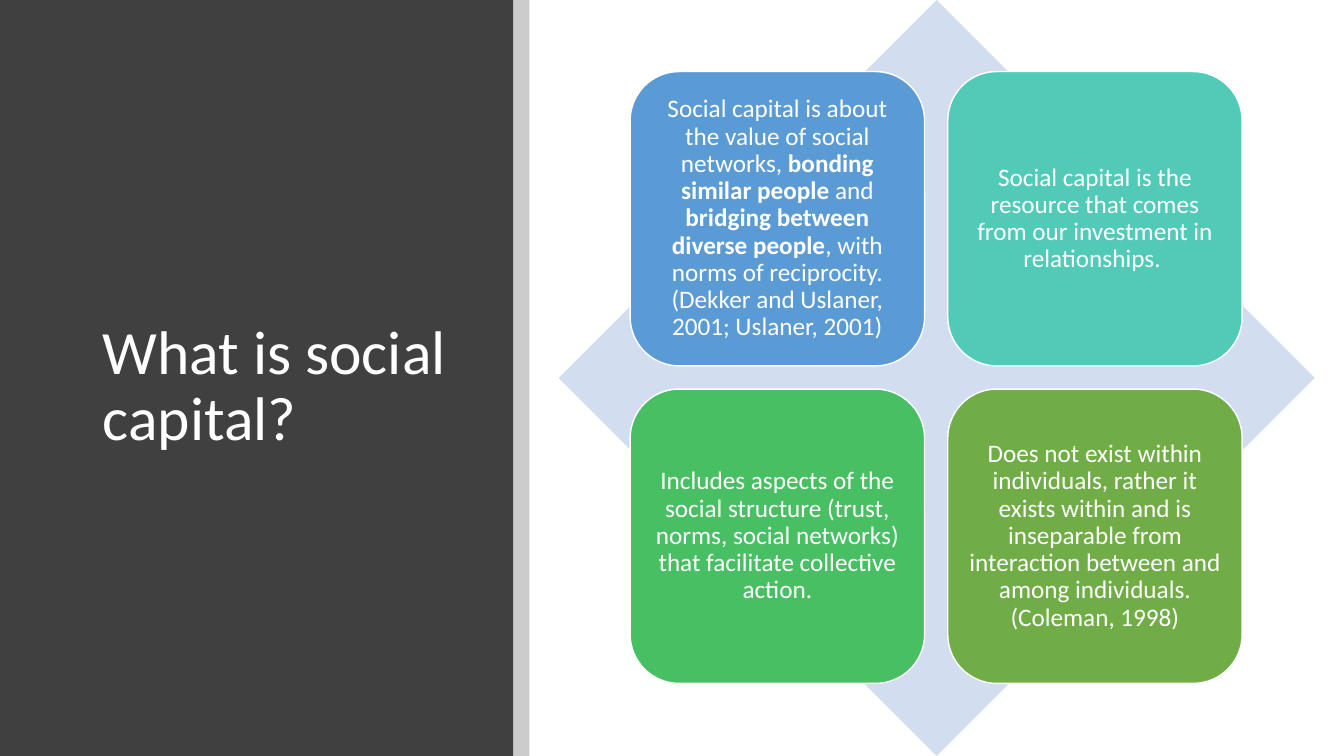
from dataclasses import dataclass
from lxml.etree import SubElement
from pptx import Presentation
from pptx.dml.color import RGBColor as Color
from pptx.enum.shapes import MSO_SHAPE as Kind
from pptx.enum.text import MSO_ANCHOR as Anchor, PP_ALIGN as Align
from pptx.oxml.ns import qn
from pptx.util import Inches, Pt


@dataclass(frozen=True)
class Theme:
    panel: str = "404040"
    strip: str = "000000"
    diamond: str = "D2DEEF"
    white: str = "FFFFFF"
    cards: tuple = ("5B9BD5", "52CAB8", "49BF64", "70AD47")
    font: str = "Calibri"
    title: int = 44
    body: int = 18


theme = Theme()
deck = Presentation()
deck.slide_width, deck.slide_height = Inches(13.33), Inches(7.5)
slide = deck.slides.add_slide(deck.slide_layouts[6])


def draw(kind, left, top, width, height, fill):
    shape = slide.shapes.add_shape(
        kind, Inches(left), Inches(top), Inches(width), Inches(height))
    shape.shadow.inherit = False
    shape.fill.solid()
    shape.fill.fore_color.rgb = Color.from_string(fill)
    shape.line.fill.background()
    return shape


def style(frame, size):
    frame.word_wrap = True
    frame.vertical_anchor = Anchor.MIDDLE
    for para in frame.paragraphs:
        para.line_spacing = 0.9
        for run in para.runs:
            run.font.name = theme.font
            run.font.size = Pt(size)
            run.font.color.rgb = Color.from_string(theme.white)


draw(Kind.RECTANGLE, 0, 0, 5.09, 7.5, theme.panel)

title = slide.shapes.add_textbox(
    Inches(0.92), Inches(0.89), Inches(3.65), Inches(5.91))
title.text_frame.text = "What is social capital?"
style(title.text_frame, theme.title)

strip = draw(Kind.RECTANGLE, 5.09, 0, 0.16, 7.5, theme.strip)
tint = strip.fill._xPr.find(qn("a:solidFill"))[0]
SubElement(tint, qn("a:alpha")).set("val", "20000")

draw(Kind.DIAMOND, 5.54, 0, 7.5, 7.5, theme.diamond)

cards = [
    ["Social capital is about the value of social networks, ",
     "bonding similar people ", "and ", "bridging between diverse people",
     ", with norms of reciprocity. (Dekker and Uslaner, 2001; Uslaner, 2001)"],
    ["Social capital is the resource that comes from our investment in "
     "relationships. "],
    ["Includes aspects of the social structure (trust, norms, social "
     "networks) that facilitate collective action."],
    ["Does not exist within individuals, rather it exists within and is "
     "inseparable from interaction between and among individuals. "
     "(Coleman, 1998)"],
]
side, step = 2.92, 3.15
for spot, (parts, fill) in enumerate(zip(cards, theme.cards)):
    row, col = divmod(spot, 2)
    card = draw(Kind.ROUNDED_RECTANGLE, 6.25 + col * step, 0.71 + row * step,
                side, side, fill)
    card.line.color.rgb = Color.from_string(theme.white)
    card.line.width = Pt(1)
    frame = card.text_frame
    frame.margin_left = frame.margin_right = Inches(0.07)
    frame.margin_top = frame.margin_bottom = Inches(0.07)
    para = frame.paragraphs[0]
    para.alignment = Align.CENTER
    for turn, part in enumerate(parts):
        run = para.add_run()
        run.text = part
        run.font.bold = turn % 2 == 1
    style(frame, theme.body)

deck.save("out.pptx")
